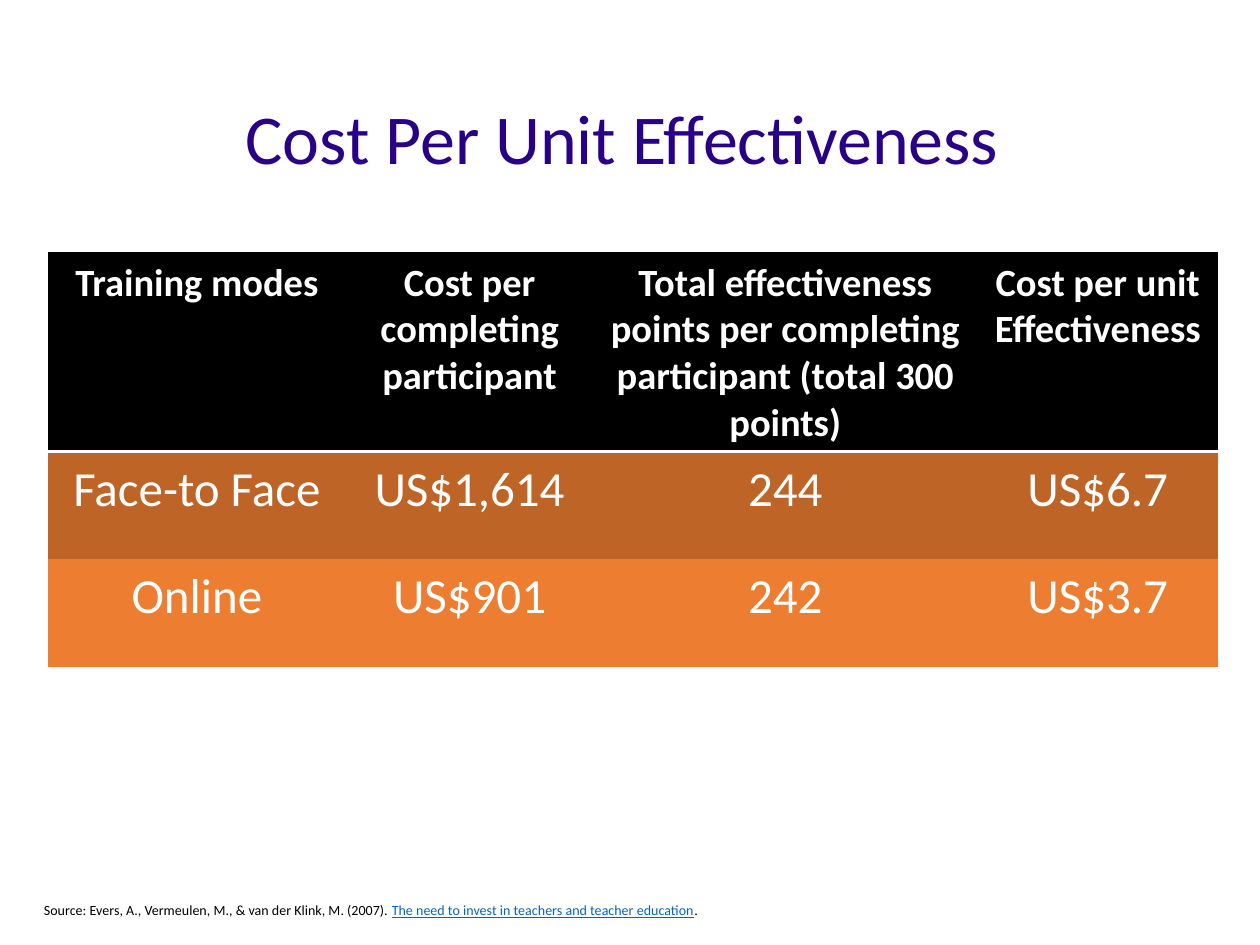
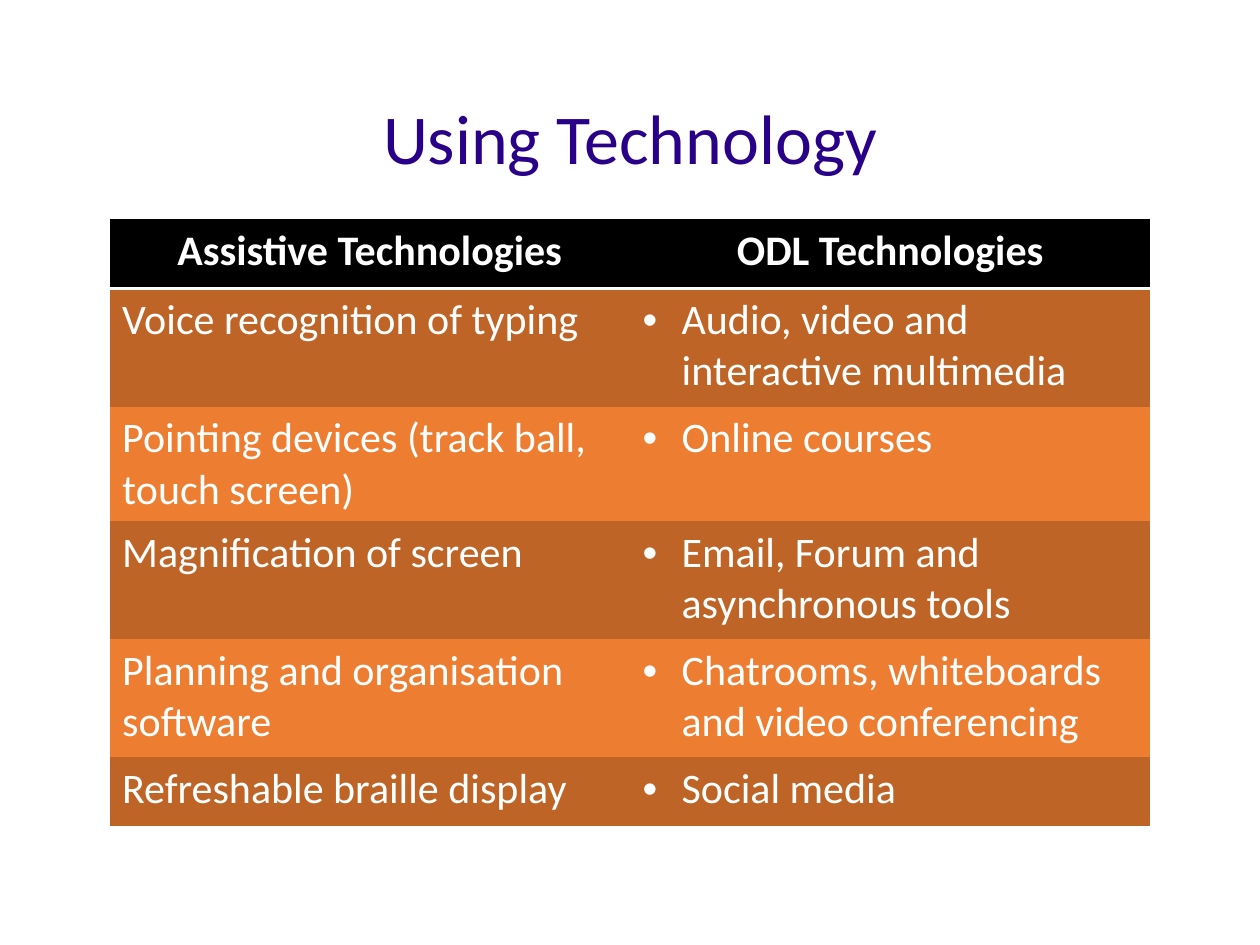
from collections import namedtuple

from lxml.etree import SubElement
from pptx import Presentation
from pptx.dml.color import RGBColor
from pptx.enum.text import MSO_ANCHOR as Anchor, PP_ALIGN as Align
from pptx.oxml import parse_xml
from pptx.oxml.ns import nsdecls, qn
from pptx.util import Emu, Inches, Pt

Box = namedtuple("Box", "left top width height")

SLIDE_WIDTH, SLIDE_HEIGHT = Inches(10), Inches(7.5)
FONT = "Calibri"
INDIGO = RGBColor(0x29, 0x00, 0x88)
BLACK = RGBColor(0x00, 0x00, 0x00)
WHITE = RGBColor(0xFF, 0xFF, 0xFF)
RUST = RGBColor(0xBE, 0x64, 0x27)
ORANGE = RGBColor(0xED, 0x7D, 0x31)
LINK_BLUE = RGBColor(0x05, 0x63, 0xC1)
PLAIN_TABLE = "{2D5ABB26-0587-4C30-8999-92F81FD0307C}"
BULLET_INDENT = Inches(0.31)

COSTS = [
    ("Training modes", "Cost per completing participant",
     "Total effectiveness points per completing participant (total 300 points)",
     "Cost per unit Effectiveness"),
    ("Face-to Face", "US$1,614", "244", "US$6.7"),
    ("Online", "US$901", "242", "US$3.7"),
]
TECHNOLOGIES = [
    ("Assistive Technologies", "ODL Technologies"),
    ("Voice recognition of typing", "Audio, video and interactive multimedia"),
    ("Pointing devices (track ball, touch screen)", "Online courses"),
    ("Magnification of screen", "Email, Forum and asynchronous tools"),
    ("Planning and organisation software",
     "Chatrooms, whiteboards and video conferencing"),
    ("Refreshable braille display", "Social media"),
]


def slide_box(left, top, width, height):
    """Turn shares of the slide, in percent, into a box."""
    return Box(Emu(int(SLIDE_WIDTH * left / 100)), Emu(int(SLIDE_HEIGHT * top / 100)),
               Emu(int(SLIDE_WIDTH * width / 100)), Emu(int(SLIDE_HEIGHT * height / 100)))


TITLE_BOX = slide_box(6.9, 5.33, 86.2, 19.33)
SOURCE_BOX = slide_box(2.5, 94.8, 94.2, 3.2)
COSTS_BOX = slide_box(3.8, 26.67, 92.9, 43.8)
TECHNOLOGIES_BOX = slide_box(8.7, 23.2, 82.6, 64.27)


def set_font(font, size, color, bold=False):
    """Apply the shared typeface with a size, colour and weight."""
    font.name, font.size, font.bold = FONT, Pt(size), bold
    font.color.rgb = color


def add_title(slide, box, title):
    """Place the centred slide title."""
    frame = slide.shapes.add_textbox(*box).text_frame
    frame.word_wrap = True
    frame.vertical_anchor = Anchor.MIDDLE
    heading = frame.paragraphs[0]
    heading.text = title
    heading.alignment = Align.CENTER
    heading.line_spacing = 0.9
    set_font(heading.font, 40, INDIGO)


def add_source(slide, box, citation, work):
    """Place the source line with the cited work underlined."""
    frame = slide.shapes.add_textbox(*box).text_frame
    frame.word_wrap = True
    line = frame.paragraphs[0]
    set_font(line.font, 8, BLACK)
    for words, is_work in ((citation, False), (work, True), (".", False)):
        run = line.add_run()
        run.text = words
        if is_work:
            run.font.underline = True
            run.font.color.rgb = LINK_BLUE


def add_bullet(paragraph):
    """Give a paragraph a hanging round bullet."""
    properties = paragraph._p.get_or_add_pPr()
    properties.set("marL", str(BULLET_INDENT))
    properties.set("indent", str(-BULLET_INDENT))
    SubElement(properties, qn("a:buFont"), typeface="Arial")
    SubElement(properties, qn("a:buChar"), char="•")


def underline_cell(cell):
    """Draw the white rule below a header cell."""
    cell._tc.get_or_add_tcPr().insert(0, parse_xml(
        f'<a:lnB {nsdecls("a")} w="{Pt(2)}"><a:solidFill><a:srgbClr val="{WHITE}"/>'
        "</a:solidFill></a:lnB>"))


def add_banded_table(slide, box, rows, column_shares, row_shares, header_size,
                     body_size, margins=(0.1, 0.05), body_align=None, bulleted=()):
    """Fill the box with a table: black header, then alternating bands."""
    table = slide.shapes.add_table(len(rows), len(rows[0]), *box).table
    table._tbl.tblPr.find(qn("a:tableStyleId")).text = PLAIN_TABLE
    for column, share in zip(table.columns, column_shares):
        column.width = Emu(int(box.width * share / sum(column_shares)))
    for row, share in zip(table.rows, row_shares):
        row.height = Emu(int(box.height * share / sum(row_shares)))
    for r, entries in enumerate(rows):
        is_header = r == 0
        for c, entry in enumerate(entries):
            cell = table.cell(r, c)
            cell.margin_left = cell.margin_right = Inches(margins[0])
            cell.margin_top = cell.margin_bottom = Inches(margins[1])
            cell.fill.solid()
            cell.fill.fore_color.rgb = BLACK if is_header else (ORANGE, RUST)[r % 2]
            paragraph = cell.text_frame.paragraphs[0]
            paragraph.text = entry
            paragraph.alignment = Align.CENTER if is_header else body_align
            if is_header:
                underline_cell(cell)
            elif c in bulleted:
                add_bullet(paragraph)
            set_font(paragraph.font, header_size if is_header else body_size,
                     WHITE, is_header)


def add_cost_slide(slide):
    """Compare the cost of the training modes."""
    add_title(slide, TITLE_BOX, "Cost Per Unit Effectiveness ")
    add_source(slide, SOURCE_BOX,
               "Source: Evers, A., Vermeulen, M., & van der Klink, M. (2007). ",
               "The need to invest in teachers and teacher education")
    add_banded_table(slide, COSTS_BOX, COSTS, (2.36, 1.96, 3.04, 1.91),
                     (1.57, 0.85, 0.85), 22, 28, margins=(0.12, 0.06),
                     body_align=Align.CENTER)


def add_technology_slide(slide):
    """List assistive and ODL technologies side by side."""
    add_title(slide, TITLE_BOX, "Using Technology")
    add_banded_table(slide, TECHNOLOGIES_BOX, TECHNOLOGIES, (1, 1),
                     (0.55, 0.94, 0.91, 0.94, 0.94, 0.55), 24, 24, bulleted=(1,))


def main():
    """Build and save the presentation."""
    deck = Presentation()
    deck.slide_width, deck.slide_height = SLIDE_WIDTH, SLIDE_HEIGHT
    blank = deck.slide_layouts[6]
    for fill_slide in (add_cost_slide, add_technology_slide):
        fill_slide(deck.slides.add_slide(blank))
    deck.save("out.pptx")


if __name__ == "__main__":
    main()
